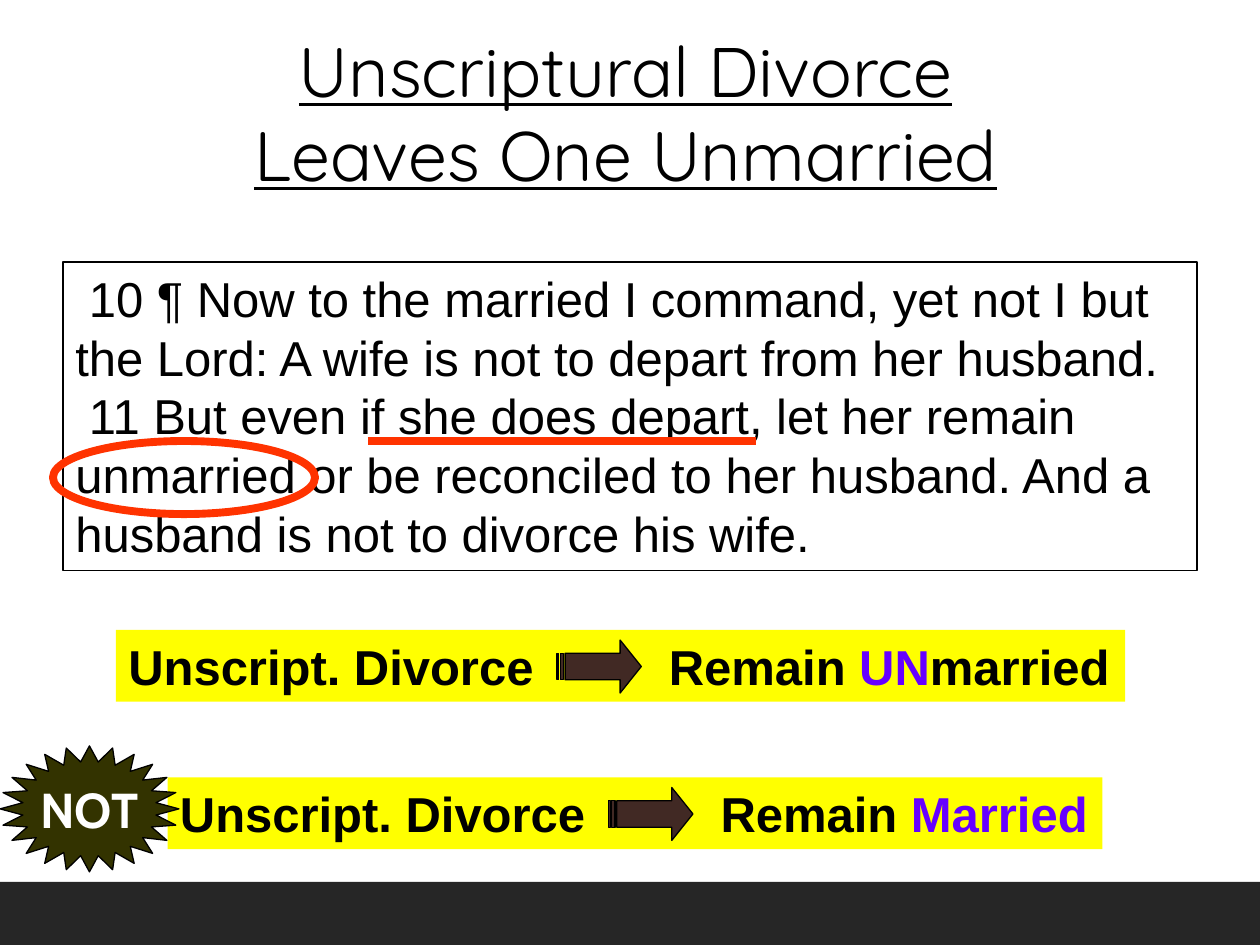
"""Build a slide on unscriptural divorce with a quoted passage and two conclusions."""
from lxml import etree
from pptx import Presentation
from pptx.dml.color import RGBColor
from pptx.enum.shapes import MSO_CONNECTOR, MSO_SHAPE
from pptx.enum.text import MSO_ANCHOR, PP_ALIGN
from pptx.oxml.ns import qn
from pptx.util import Inches, Pt

RECTANGLE, OVAL = MSO_SHAPE.RECTANGLE, MSO_SHAPE.OVAL
ARROW, STAR = MSO_SHAPE.STRIPED_RIGHT_ARROW, MSO_SHAPE.STAR_24_POINT
STRAIGHT = MSO_CONNECTOR.STRAIGHT
TOP, MIDDLE = MSO_ANCHOR.TOP, MSO_ANCHOR.MIDDLE
LEFT, CENTER = PP_ALIGN.LEFT, PP_ALIGN.CENTER

COLORS = {
    "black": "000000", "white": "FFFFFF", "footer": "262626", "mark": "FF3300",
    "yellow": "FFFF00", "violet": "6600FF", "brown": "412924", "olive": "333300",
}
TITLE = [[("Unscriptural Divorce", "black")], [("Leaves One Unmarried", "black")]]
VERSES = [
    [(" 10 ¶ Now to the married I command, yet not I but the Lord: "
      "A wife is not to depart from her husband.", "black")],
    [(" 11 But even if she does depart, let her remain unmarried or be reconciled "
      "to her husband. And a husband is not to divorce his wife.", "black")],
]
CONCLUSIONS = [
    {"at": (0.92, 5, 8.01, 0.57), "outcome": [("UN", "violet"), ("married", "black")]},
    {"at": (1.33, 6.17, 7.42, 0.57), "outcome": [("Married", "violet")]},
]
TITLE_FONT = {"name": "Quicksand", "size": Pt(40), "underline": True}
BODY_FONT = {"name": "Arial", "size": Pt(28)}
BOLD_FONT = {**BODY_FONT, "bold": True}
BADGE_FONT = {"name": "Cabin", "size": Pt(28), "bold": True}
ARROW_OFFSET = (3.5, 0.08)
OUTCOME_TAB = 4.29


def rgb(color):
    return RGBColor.from_string(COLORS[color])


def add_figure(page, kind, at, fill=None, line=None, width=0.75):
    shape = page.shapes.add_shape(kind, *map(Inches, at))
    shape.shadow.inherit = False
    if fill:
        shape.fill.solid()
        shape.fill.fore_color.rgb = rgb(fill)
    else:
        shape.fill.background()
    if line:
        shape.line.color.rgb = rgb(line)
        shape.line.width = Pt(width)
    else:
        shape.line.fill.background()
    return shape


def write(box, paragraphs, font, align=LEFT, anchor=TOP, wrap=True):
    frame = box.text_frame
    frame.word_wrap = wrap
    frame.vertical_anchor = anchor
    for index, spans in enumerate(paragraphs):
        para = frame.add_paragraph() if index else frame.paragraphs[0]
        para.alignment = align
        for text, color in spans:
            span = para.add_run()
            span.text = text
            span.font.color.rgb = rgb(color)
            for name, value in font.items():
                setattr(span.font, name, value)


def add_conclusion(page, at, outcome):
    box = add_figure(page, RECTANGLE, at, "yellow")
    spans = [("Unscript. Divorce\tRemain ", "black"), *outcome]
    write(box, [spans], BOLD_FONT)
    box.text_frame.margin_right = 0
    properties = box.text_frame.paragraphs[0]._p.get_or_add_pPr()
    tabs = etree.SubElement(properties, qn("a:tabLst"))
    etree.SubElement(tabs, qn("a:tab"), pos=str(Inches(OUTCOME_TAB)), algn="l")
    left, top = (start + offset for start, offset in zip(at, ARROW_OFFSET))
    arrow = add_figure(page, ARROW, (left, top, 0.67, 0.42), "brown", "black")
    arrow.adjustments[1] = 0.4


def add_underline(page, start, end):
    line = page.shapes.add_connector(STRAIGHT, *map(Inches, (*start, *end)))
    line.line.color.rgb = rgb("mark")
    line.line.width = Pt(4.5)
    etree.SubElement(line._element.spPr, qn("a:effectLst"))


def main():
    deck = Presentation()
    deck.slide_width, deck.slide_height = Inches(10), Inches(7.5)
    page = deck.slides.add_slide(deck.slide_layouts[6])
    add_figure(page, RECTANGLE, (0, 7, 10, 0.5), "footer")
    passage = add_figure(page, RECTANGLE, (0.5, 2.08, 9, 2.45), line="black")
    write(passage, VERSES, BODY_FONT)
    title = page.shapes.add_textbox(*map(Inches, (1.75, 0.17, 6.43, 1.45)))
    write(title, TITLE, TITLE_FONT, CENTER, wrap=False)
    add_underline(page, (2.92, 3.5), (6, 3.5))
    add_figure(page, OVAL, (0.42, 3.5, 2.08, 0.58), line="mark", width=4.5)
    for conclusion in CONCLUSIONS:
        add_conclusion(page, **conclusion)
    badge = add_figure(page, STAR, (0, 5.92, 1.42, 1), "olive", "black")
    badge.adjustments[0] = 0.375
    write(badge, [[("NOT", "white")]], BADGE_FONT, CENTER, MIDDLE, wrap=False)
    deck.save("out.pptx")


if __name__ == "__main__":
    main()
